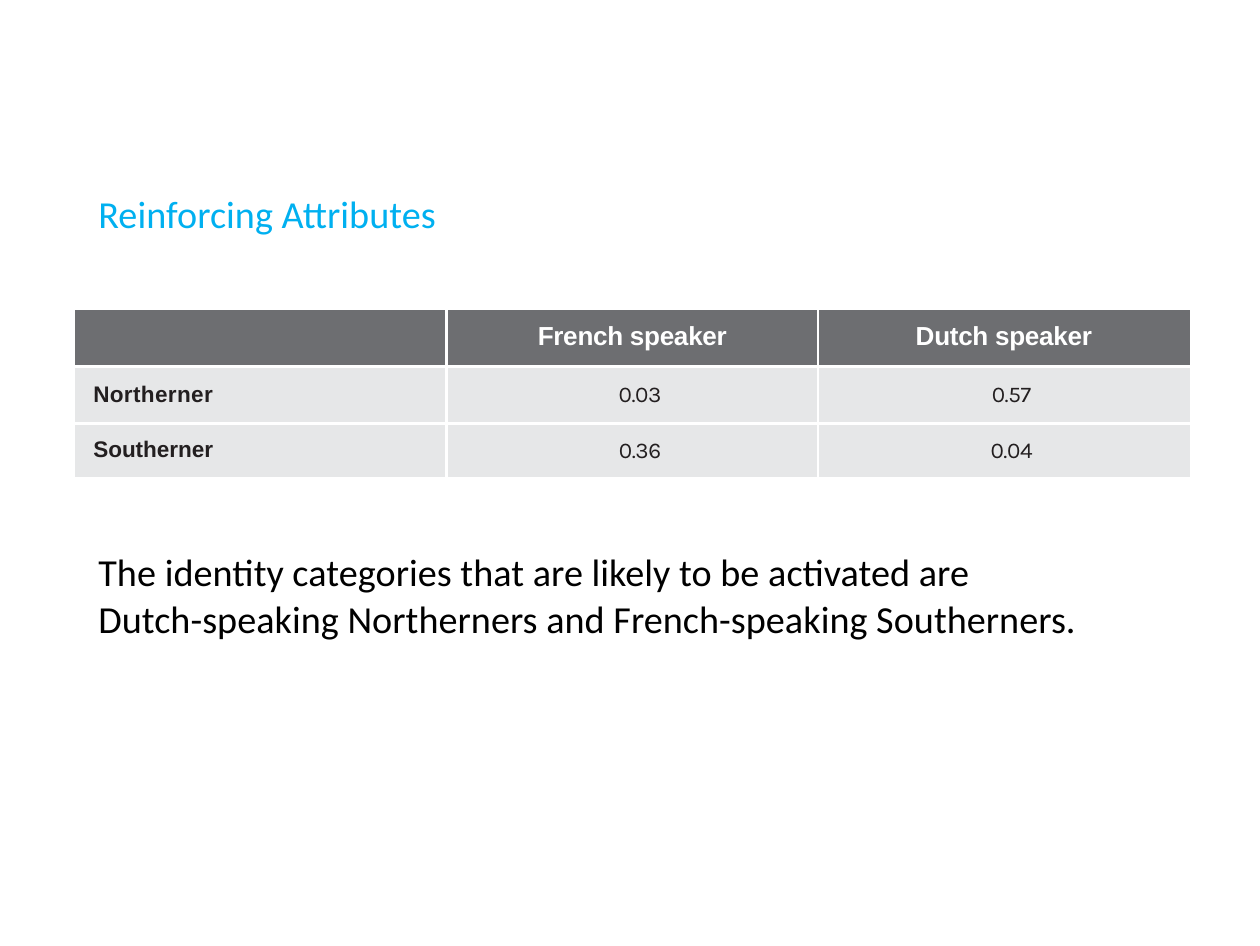
from pptx import Presentation, util as u
from pptx.dml.color import RGBColor
from pptx.enum import text
from pptx.oxml import parse_xml
from pptx.oxml.ns import nsdecls

W, H = u.Pt(363), u.Pt(272.5)
ROWS = [
    ["", "French speaker", "Dutch speaker"],
    ["Northerner", "0.03", "0.57"],
    ["Southerner", "0.36", "0.04"],
]
ROW_HEIGHTS = [16.2, 16.5, 15.5]
SPACE_BEFORE = [3.4, 4.5, 4]
LABEL_TRACKING = [0, 10, 0]


def rgb(value):
    """Turn a hex string into a colour."""
    return RGBColor.from_string(value)


def style(p, font, size, color, bold=False, indent=0, before=0):
    """Format one paragraph, with its indent and spacing in points."""
    f = p.font
    f.name, f.size, f.bold = font, u.Pt(size), bold
    f.color.rgb = rgb(color)
    p.space_before = u.Pt(before)
    p_pr = p._p.get_or_add_pPr()
    p_pr.set("marL", str(u.Pt(indent)))
    p_pr.set("indent", "0")
    p._p.get_or_add_endParaRPr().set("sz", str(int(size * 100)))


def fill_text(s, box, words, color, before, spacing=1.0):
    """Place a text shape in its box and write its words."""
    s.left, s.top, s.width, s.height = (u.Inches(v) for v in box)
    tf = s.text_frame
    tf.text = words
    tf.word_wrap = True
    tf.auto_size = text.MSO_AUTO_SIZE.NONE
    tf.vertical_anchor = text.MSO_ANCHOR.TOP
    tf.margin_left = tf.margin_right = tf.margin_bottom = 0
    tf.margin_top = u.Inches(0.01)
    p = tf.paragraphs[0]
    p.alignment = text.PP_ALIGN.LEFT
    p.line_spacing = spacing
    style(p, "Calibri", 11, color, indent=1, before=before)


def add_borders(cell, row, col, color="FFFFFF", width=1):
    """Draw a solid line on the sides that face another cell."""
    inner = {"L": col > 0, "R": col < len(ROWS[0]) - 1,
             "T": row > 0, "B": row < len(ROWS) - 1}
    tc_pr = cell._tc.get_or_add_tcPr()
    for i, (side, drawn) in enumerate(inner.items()):
        paint = (f'<a:solidFill><a:srgbClr val="{color}"/></a:solidFill>'
                 if drawn else "<a:noFill/>")
        tc_pr.insert(i, parse_xml(
            f'<a:ln{side} {nsdecls("a")} w="{u.Pt(width) if drawn else 0}">'
            f'{paint}</a:ln{side}>'))


def fill_cell(cell, words, row, col):
    """Write and format one cell by its place in the table."""
    header, label = row == 0, col == 0
    cell.text = words
    cell.margin_left = cell.margin_right = cell.margin_bottom = 0
    cell.margin_top = u.Pt(SPACE_BEFORE[row])
    cell.fill.solid()
    cell.fill.fore_color.rgb = rgb("6D6E71" if header else "E6E7E8")
    add_borders(cell, row, col)
    p = cell.text_frame.paragraphs[0]
    p.alignment = text.PP_ALIGN.LEFT if label else text.PP_ALIGN.CENTER
    style(p, "Arial" if header or label else "Karla", 7.5 if header else 6.5,
          "FFFFFF" if header else "231F20", bold=header or label,
          indent=0 if header else 5.3 if label else 4.5,
          before=SPACE_BEFORE[row])
    for r in p.runs:
        tracking = LABEL_TRACKING[row] if label else -10
        r._r.get_or_add_rPr().set("spc", str(tracking))


def add_speaker_table(slide, box):
    """Add the table of regions against languages."""
    left, top, width, height = (u.Inches(v) for v in box)
    table = slide.shapes.add_table(
        len(ROWS), len(ROWS[0]), left, top, width, height).table
    table.first_row = table.horz_banding = False
    for r, words in enumerate(ROWS):
        table.rows[r].height = u.Pt(ROW_HEIGHTS[r])
        for c, word in enumerate(words):
            fill_cell(table.cell(r, c), word, r, c)


def add_attributes_slide(prs):
    """Build the slide from title, table and conclusion."""
    slide = prs.slides.add_slide(prs.slide_layouts[5])
    fill_text(slide.shapes.title, (0.38, 0.75, 1.42, 0.2),
              "Reinforcing Attributes", "00B0F0", before=0.9)
    add_speaker_table(slide, (0.3, 1.24, 4.46, 0.67))
    fill_text(slide.shapes.add_textbox(0, 0, W, H), (0.38, 2.18, 3.99, 0.38),
              "The identity categories that are likely to be activated are\v"
              "Dutch-speaking Northerners and French-speaking Southerners.",
              "000000", before=0.6, spacing=1.02)


def main():
    """Create and save the presentation."""
    prs = Presentation()
    prs.slide_width, prs.slide_height = W, H
    add_attributes_slide(prs)
    prs.save("out.pptx")


if __name__ == "__main__":
    main()
